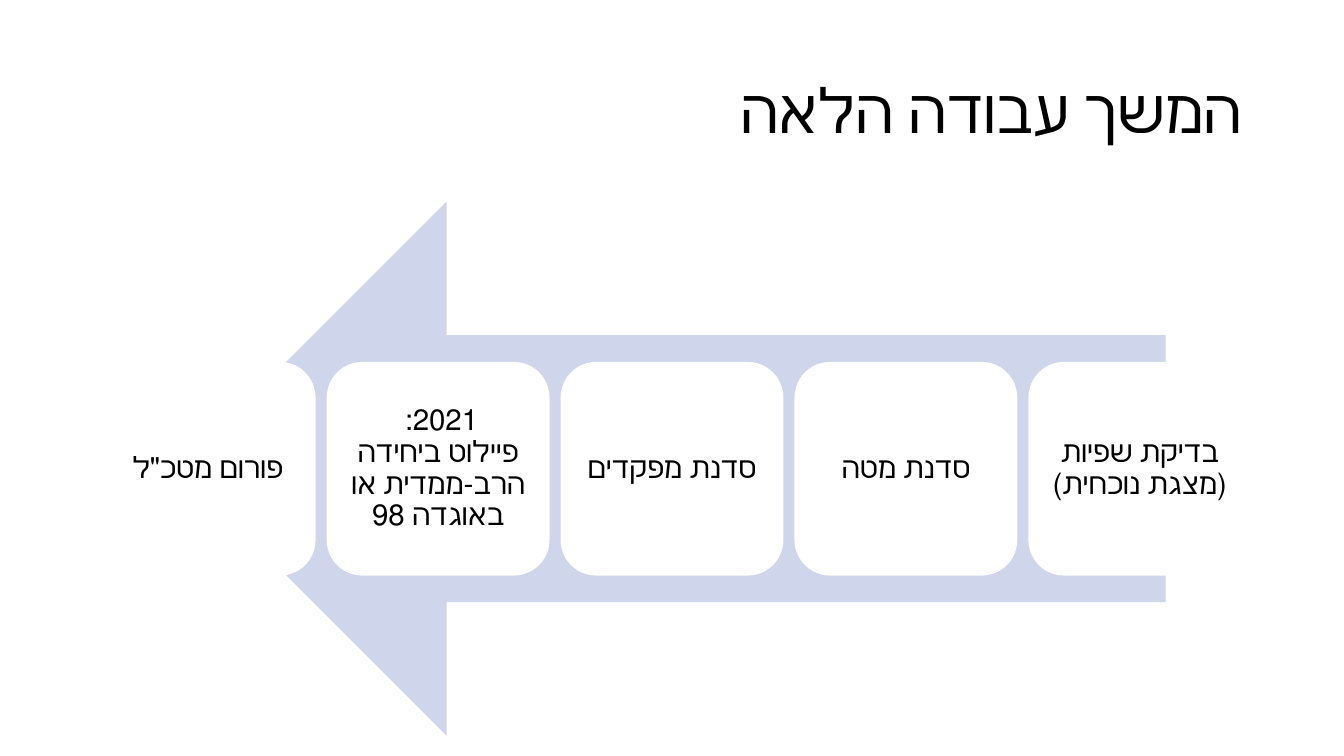
from dataclasses import dataclass

from pptx import Presentation
from pptx.dml.color import RGBColor
from pptx.enum.shapes import MSO_SHAPE as Shape
from pptx.enum.text import MSO_ANCHOR as Anchor, MSO_AUTO_SIZE as AutoSize, PP_ALIGN as Align
from pptx.util import Inches, Pt

FONT = "Roboto"
BLACK, WHITE, PALE_BLUE = "000000", "FFFFFF", "CFD5EA"

# Grid: five columns inside the slide margins, counted from the left
MARGIN, COLUMN_STEP = 0.92, 2.32
STEP_TOP, STEP_WIDTH, STEP_HEIGHT = 3.59, 2.21, 2.12
INSET = 0.09


@dataclass
class Step:
    column: int
    text: str


STEPS = [
    Step(4, "בדיקת שפיות (מצגת נוכחית)"),
    Step(3, "סדנת מטה"),
    Step(2, "סדנת מפקדים"),
    Step(1, "2021: \vפיילוט ביחידה הרב-ממדית או באוגדה 98"),
    Step(0, "פורום מטכ\"ל "),
]


def color(value: str) -> RGBColor:
    return RGBColor.from_string(value)


def write(shape, text: str, size: float, align: Align) -> None:
    """Set right-to-left text, vertically centred, in the slide's font."""
    frame = shape.text_frame
    frame.text = text
    frame.word_wrap = True
    frame.auto_size = AutoSize.NONE
    frame.vertical_anchor = Anchor.MIDDLE
    paragraph = frame.paragraphs[0]
    paragraph.alignment = align
    paragraph.line_spacing = 0.9
    paragraph._p.get_or_add_pPr().set("rtl", "1")
    for run in paragraph.runs:
        run.font.size = Pt(size)
        run.font.name = FONT
        run.font.color.rgb = color(BLACK)


def add_block(slide, kind: Shape, left: float, top: float,
              width: float, height: float, fill: str):
    shape = slide.shapes.add_shape(
        kind, Inches(left), Inches(top), Inches(width), Inches(height))
    shape.shadow.inherit = False
    shape.fill.solid()
    shape.fill.fore_color.rgb = color(fill)
    shape.line.fill.background()
    return shape


def add_step(slide, step: Step) -> None:
    left = MARGIN + step.column * COLUMN_STEP
    box = add_block(slide, Shape.ROUNDED_RECTANGLE, left, STEP_TOP,
                    STEP_WIDTH, STEP_HEIGHT, WHITE)
    frame = box.text_frame
    frame.margin_left = frame.margin_right = Inches(INSET)
    frame.margin_top = frame.margin_bottom = Inches(INSET)
    write(box, step.text, 21, Align.CENTER)


def main() -> None:
    presentation = Presentation()
    presentation.slide_width = Inches(13.33)
    presentation.slide_height = Inches(7.5)
    slide = presentation.slides.add_slide(presentation.slide_layouts[5])

    # Title
    title = slide.shapes.title
    title.left, title.top = Inches(MARGIN), Inches(0.4)
    title.width, title.height = Inches(11.5), Inches(1.45)
    write(title, "המשך עבודה הלאה", 44, Align.RIGHT)

    # Process arrow with its steps on top
    add_block(slide, Shape.LEFT_ARROW, 1.78, 2, 9.78, 5.3, PALE_BLUE)
    for step in STEPS:
        add_step(slide, step)

    presentation.save("out.pptx")


if __name__ == "__main__":
    main()
